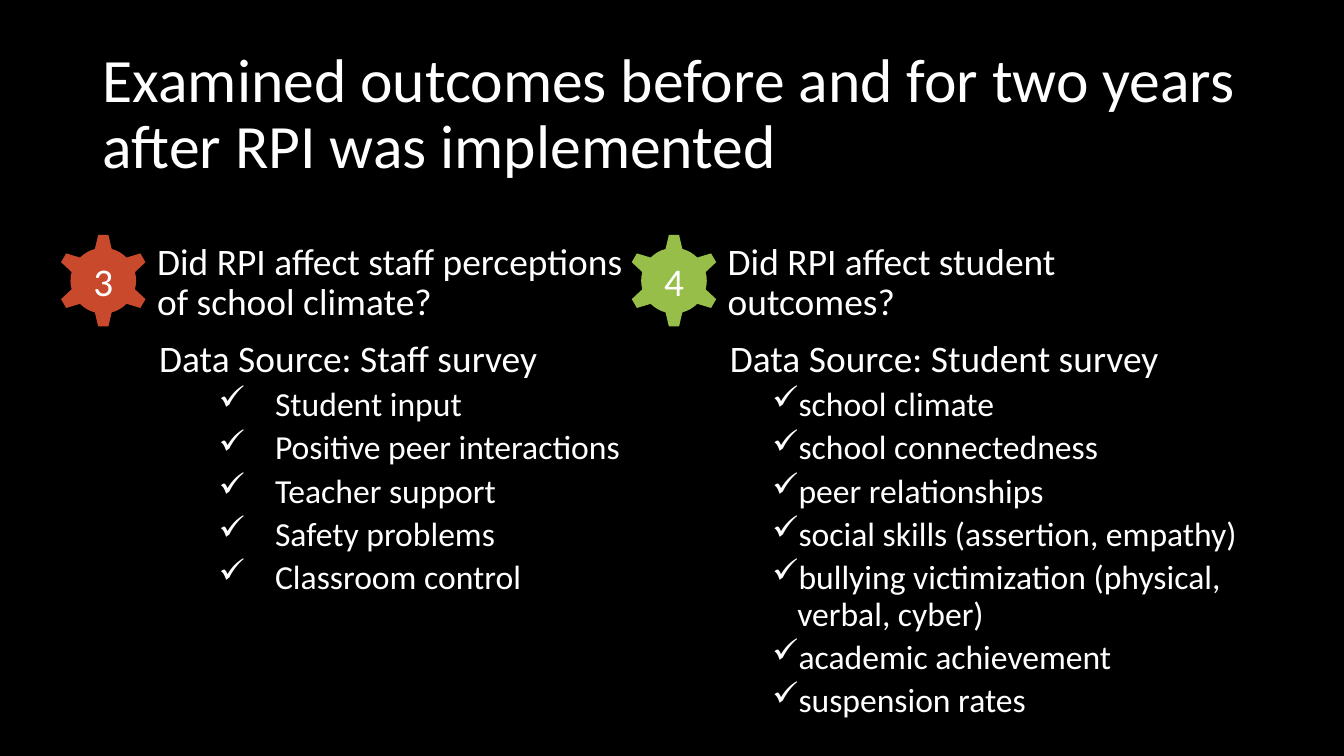
from dataclasses import dataclass
from typing import Any

from lxml.etree import SubElement
from pptx import Presentation
from pptx.dml.color import RGBColor
from pptx.enum.shapes import MSO_SHAPE
from pptx.enum.text import MSO_ANCHOR, PP_ALIGN
from pptx.oxml.ns import qn
from pptx.slide import Slide
from pptx.text.text import TextFrame
from pptx.util import Inches, Pt

BLACK = RGBColor(0x00, 0x00, 0x00)
WHITE = RGBColor(0xFF, 0xFF, 0xFF)
RED = RGBColor(0xC9, 0x49, 0x2C)
GREEN = RGBColor(0x97, 0xBE, 0x49)

COLUMN_LEFT = 0.9
COLUMN_PITCH = 5.66
COLUMN_WIDTH = 5.86
GEAR_LEFT = 0.56
GEAR_SIZE = 0.93


@dataclass(frozen=True)
class ParagraphStyle:
    size: float
    space_before: float = 0
    margin: float = 0
    indent: float = 0
    bullet: str = ""
    line_spacing: float = 0.9
    alignment: PP_ALIGN = PP_ALIGN.LEFT


@dataclass(frozen=True)
class ResearchQuestion:
    number: str
    color: RGBColor
    question_lines: tuple[str, ...]
    data_source: str
    measures: tuple[str, ...]
    measure_style: ParagraphStyle


TITLE = ParagraphStyle(44)
GEAR_NUMBER = ParagraphStyle(28, line_spacing=1.0, alignment=PP_ALIGN.CENTER)
QUESTION = ParagraphStyle(26.7, margin=0.56)
DATA_SOURCE = ParagraphStyle(26.7, 12, 0.58)
STAFF_MEASURE = ParagraphStyle(24, 5, 1.73, -0.56, "✓")
STUDENT_MEASURE = ParagraphStyle(24, 5, 1.25, -0.25, "✓")

QUESTIONS = (
    ResearchQuestion(
        "3", RED,
        ("Did RPI affect staff perceptions", "of school climate?"),
        "Data Source: Staff survey",
        ("Student input", "Positive peer interactions", "Teacher support",
         "Safety problems", "Classroom control"),
        STAFF_MEASURE,
    ),
    ResearchQuestion(
        "4", GREEN,
        ("Did RPI affect student", "outcomes?"),
        "Data Source: Student survey",
        ("school climate", "school connectedness", "peer relationships",
         "social skills (assertion, empathy)",
         "bullying victimization (physical, verbal, cyber)",
         "academic achievement", "suspension rates"),
        STUDENT_MEASURE,
    ),
)


def apply_format(target: Any, values: dict[str, Any]) -> None:
    for name, value in values.items():
        setattr(target, name, value)


def write_paragraph(frame: TextFrame, lines: tuple[str, ...], style: ParagraphStyle) -> None:
    paragraph = frame.paragraphs[0]
    if paragraph.runs:
        paragraph = frame.add_paragraph()
    properties = paragraph._p.get_or_add_pPr()
    properties.set("marL", str(Inches(style.margin)))
    properties.set("indent", str(Inches(style.indent)))
    if style.bullet:
        SubElement(properties, qn("a:buChar")).set("char", style.bullet)
    else:
        SubElement(properties, qn("a:buNone"))
    apply_format(paragraph, {
        "alignment": style.alignment,
        "line_spacing": style.line_spacing,
        "space_before": Pt(style.space_before),
    })
    for index, line in enumerate(lines):
        if index:
            paragraph.add_line_break()
        run = paragraph.add_run()
        run.text = line
        apply_format(run.font, {"name": "Calibri", "size": Pt(style.size)})
        run.font.color.rgb = WHITE


def add_text_box(slide: Slide, left: float, top: float, width: float,
                 height: float, anchor: MSO_ANCHOR) -> TextFrame:
    text_box = slide.shapes.add_textbox(
        Inches(left), Inches(top), Inches(width), Inches(height))
    apply_format(text_box.text_frame, {"word_wrap": True, "vertical_anchor": anchor})
    return text_box.text_frame


def add_gear(slide: Slide, left: float, number: str, color: RGBColor) -> None:
    gear = slide.shapes.add_shape(
        MSO_SHAPE.GEAR_6, Inches(left), Inches(2.32), Inches(GEAR_SIZE), Inches(GEAR_SIZE))
    gear.shadow.inherit = False
    gear.fill.solid()
    gear.fill.fore_color.rgb = color
    gear.line.fill.background()
    gear.text_frame.vertical_anchor = MSO_ANCHOR.MIDDLE
    write_paragraph(gear.text_frame, (number,), GEAR_NUMBER)


def add_question(slide: Slide, column: int, question: ResearchQuestion) -> None:
    offset = column * COLUMN_PITCH
    frame = add_text_box(
        slide, COLUMN_LEFT + offset, 2.36, COLUMN_WIDTH, 4.89, MSO_ANCHOR.TOP)
    write_paragraph(frame, question.question_lines, QUESTION)
    write_paragraph(frame, (question.data_source,), DATA_SOURCE)
    for measure in question.measures:
        write_paragraph(frame, (measure,), question.measure_style)
    add_gear(slide, GEAR_LEFT + offset, question.number, question.color)


def main() -> None:
    presentation = Presentation()
    apply_format(presentation, {"slide_width": Inches(13.33), "slide_height": Inches(7.5)})
    slide = presentation.slides.add_slide(presentation.slide_layouts[6])
    slide.background.fill.solid()
    slide.background.fill.fore_color.rgb = BLACK
    title = add_text_box(slide, 0.92, 0.42, 11.5, 1.45, MSO_ANCHOR.MIDDLE)
    write_paragraph(
        title, ("Examined outcomes before and for two years after RPI was implemented",), TITLE)
    for column, question in enumerate(QUESTIONS):
        add_question(slide, column, question)
    presentation.save("out.pptx")


if __name__ == "__main__":
    main()
